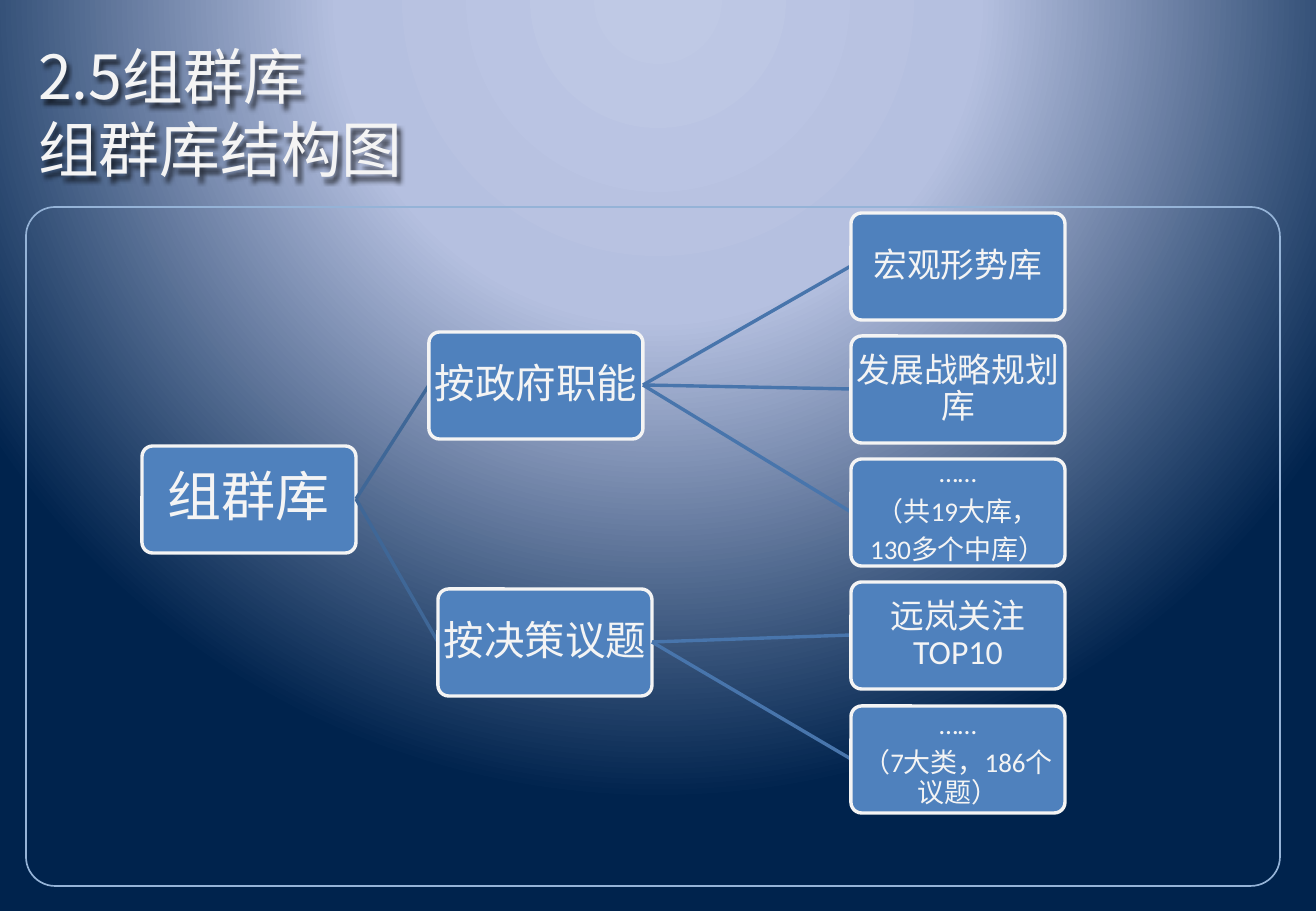
"""Build the group library structure slide."""
import lxml.etree
import pptx
import pptx.dml.color
import pptx.enum.shapes
import pptx.enum.text
import pptx.oxml
import pptx.oxml.ns
import pptx.util

SLIDE_SIZE = (1316, 911)
FRAME = (26, 207, 1254, 679)
TITLE_AREA = (26, 36, 1254, 152)
TITLE = ["2.5组群库", "组群库结构图"]
BACKGROUND = [(0, "BFC9E5"), (40, "B5C0E0"), (100, "00234D")]
CJK, LATIN = "Noto Sans CJK SC", "Calibri"
LIGHT, BLUE, FRAME_BLUE = "F4F4F4", "4F81BD", "95B3D7"
LINKS = ["3F6797", "4875AC"]

ROOT = (["组群库"], 32, (142, 446))
BRANCHES = [
    (["按政府职能"], 24, (429, 332), [
        (["宏观形势库"], 20),
        (["发展战略规划库"], 20),
        (["……", "（共19大库，", "130多个中库）"], 16),
    ]),
    (["按决策议题"], 24, (438, 589), [
        (["远岚关注TOP10"], 20),
        (["……", "（7大类，186个议题）"], 16),
    ]),
]
NODE_W, NODE_H = 214, 107
LEAF_X, LEAF_TOP, LEAF_SPAN = 851, 213, 493

SHADOW = (
    '<a:effectLst %s><a:outerShdw blurRad="38100" dist="38100" dir="2700000" algn="tl">'
    '<a:srgbClr val="000000"><a:alpha val="65000"/></a:srgbClr></a:outerShdw></a:effectLst>'
) % pptx.oxml.ns.nsdecls("a")


def px(length):
    """Turn px into EMU."""
    return pptx.util.Emu(length * 7526)


def rgb(value):
    """Turn a hex string into a colour."""
    return pptx.dml.color.RGBColor.from_string(value)


def add_child(parent, tag, **attributes):
    """Append a drawing element to its parent."""
    return lxml.etree.SubElement(parent, pptx.oxml.ns.qn(tag), attributes)


def write(frame, lines, size, font, align, spacing=1.0, after=0.0, inset=(12, 6)):
    """Fill a text frame with one paragraph per line."""
    frame.word_wrap = True
    frame.auto_size = pptx.enum.text.MSO_AUTO_SIZE.NONE
    frame.vertical_anchor = pptx.enum.text.MSO_ANCHOR.MIDDLE
    frame.margin_left = frame.margin_right = px(inset[0])
    frame.margin_top = frame.margin_bottom = px(inset[1])
    for index, line in enumerate(lines):
        paragraph = frame.add_paragraph() if index else frame.paragraphs[0]
        paragraph.alignment = align
        paragraph.line_spacing = spacing
        paragraph.space_before = pptx.util.Pt(0)
        paragraph.space_after = pptx.util.Pt(size * after)
        run = paragraph.add_run()
        run.text = line
        run.font.size = pptx.util.Pt(size)
        run.font.color.rgb = rgb(LIGHT)
        run.font.name = font
        add_child(run.font._element, "a:ea", typeface=CJK)


def add_rounded(slide, area, radius, line, width, fill=None):
    """Add a rounded rectangle."""
    shape = slide.shapes.add_shape(
        pptx.enum.shapes.MSO_SHAPE.ROUNDED_RECTANGLE, *map(px, area))
    shape.adjustments[0] = radius
    shape.shadow.inherit = False
    shape.line.color.rgb = rgb(line)
    shape.line.width = pptx.util.Pt(width)
    if fill:
        shape.fill.solid()
        shape.fill.fore_color.rgb = rgb(fill)
    else:
        shape.fill.background()
    return shape


def add_node(slide, lines, size, place):
    """Add one box of the tree."""
    node = add_rounded(slide, (*place, NODE_W, NODE_H), 0.1, LIGHT, 2, BLUE)
    write(node.text_frame, lines, size, LATIN, pptx.enum.text.PP_ALIGN.CENTER,
          spacing=0.9, after=0.35, inset=(1, 1))


def add_link(slide, parent, child, color):
    """Join the right side of a parent to the left side of a child."""
    middle = NODE_H // 2
    link = slide.shapes.add_connector(
        pptx.enum.shapes.MSO_CONNECTOR.STRAIGHT,
        px(parent[0] + NODE_W), px(parent[1] + middle), px(child[0]), px(child[1] + middle))
    link.line.color.rgb = rgb(color)
    link.line.width = pptx.util.Pt(2)
    add_child(link._element.spPr, "a:effectLst")


def paint_background(slide):
    """Set the circular gradient centred above the slide."""
    fill = slide.background.fill
    fill.gradient()
    gradient = next(slide.element.iter(pptx.oxml.ns.qn("a:gradFill")))
    for part in list(gradient):
        gradient.remove(part)
    stops = add_child(gradient, "a:gsLst")
    for position, color in BACKGROUND:
        stop = add_child(stops, "a:gs", pos=str(position * 1000))
        add_child(stop, "a:srgbClr", val=color)
    circle = add_child(gradient, "a:path", path="circle")
    add_child(circle, "a:fillToRect", l="50000", t="-80000", r="50000", b="180000")


def main():
    """Build and save the slide."""
    deck = pptx.Presentation()
    deck.slide_width, deck.slide_height = map(px, SLIDE_SIZE)
    slide = deck.slides.add_slide(deck.slide_layouts[5])
    paint_background(slide)
    add_rounded(slide, FRAME, 0.043, FRAME_BLUE, 1)

    title = slide.shapes.title
    title.left, title.top, title.width, title.height = map(px, TITLE_AREA)
    title._element.spPr.append(pptx.oxml.parse_xml(SHADOW))
    write(title.text_frame, TITLE, 36, CJK, pptx.enum.text.PP_ALIGN.LEFT)

    add_node(slide, *ROOT)
    leaf_count = sum(len(leaves) for *_, leaves in BRANCHES)
    row = 0
    for lines, size, place, leaves in BRANCHES:
        add_link(slide, ROOT[2], place, LINKS[0])
        add_node(slide, lines, size, place)
        for leaf_lines, leaf_size in leaves:
            leaf_place = (LEAF_X, LEAF_TOP + LEAF_SPAN * row // (leaf_count - 1))
            add_link(slide, place, leaf_place, LINKS[1])
            add_node(slide, leaf_lines, leaf_size, leaf_place)
            row += 1
    deck.save("out.pptx")


if __name__ == "__main__":
    main()
